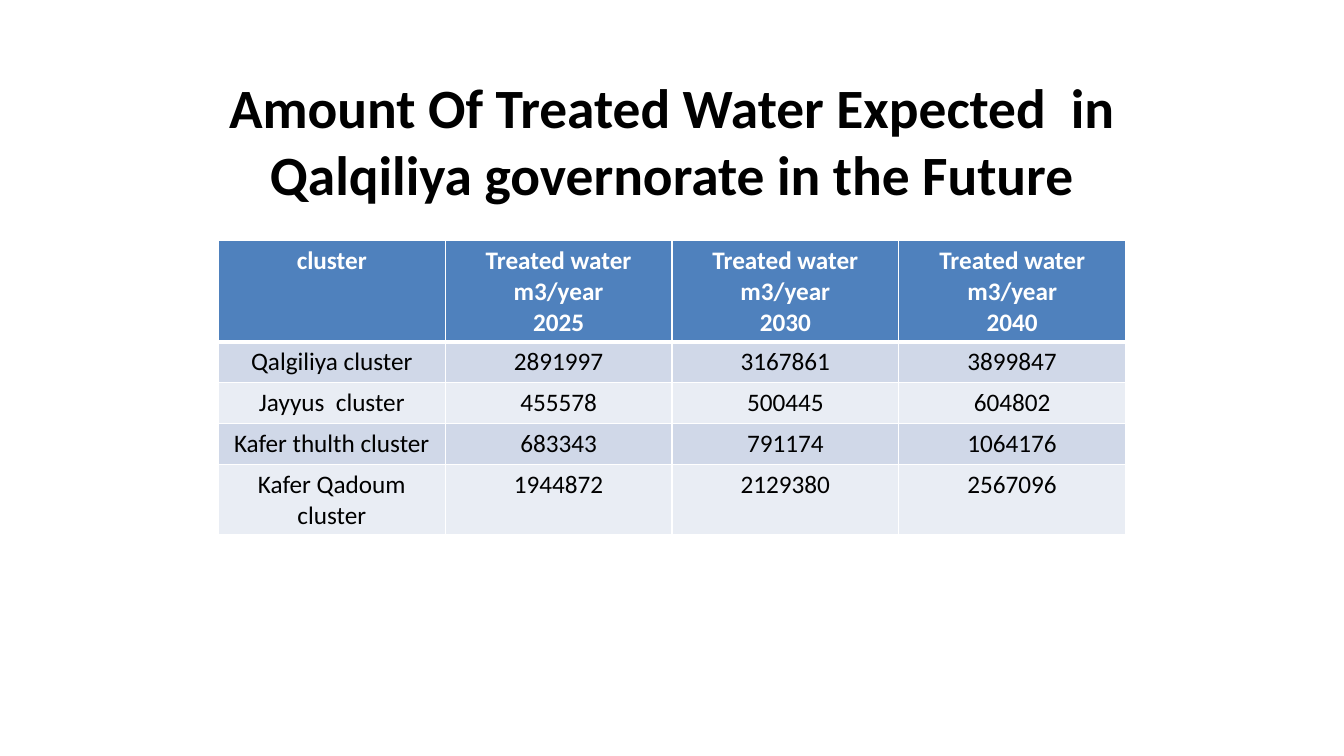
from lxml import etree
from pptx import Presentation
from pptx.dml.color import RGBColor
from pptx.enum.text import MSO_ANCHOR, PP_ALIGN
from pptx.oxml.ns import qn
from pptx.util import Pt

CENTER = PP_ALIGN.CENTER
MIDDLE = MSO_ANCHOR.MIDDLE
BLACK = RGBColor(0x00, 0x00, 0x00)
WHITE = RGBColor(0xFF, 0xFF, 0xFF)
HEADER_BLUE = RGBColor(0x4F, 0x81, 0xBD)
BANDS = (RGBColor(0xD0, 0xD8, 0xE8), RGBColor(0xE9, 0xED, 0xF4))
FONT = "Calibri"

TITLE = "Amount Of Treated Water Expected  in Qalqiliya governorate in the Future"
YEARS = (2025, 2030, 2040)
CLUSTERS = (
    ("Qalgiliya cluster", 2891997, 3167861, 3899847),
    ("Jayyus  cluster", 455578, 500445, 604802),
    ("Kafer thulth cluster", 683343, 791174, 1064176),
    ("Kafer Qadoum cluster", 1944872, 2129380, 2567096),
)


def add_lines(text_frame, lines, size, color, bold):
    for index, line in enumerate(lines):
        paragraph = text_frame.paragraphs[0] if index == 0 else text_frame.add_paragraph()
        paragraph.alignment = CENTER
        run = paragraph.add_run()
        run.text = line
        run.font.name = FONT
        run.font.size = Pt(size)
        run.font.bold = bold
        run.font.color.rgb = color


def add_title(slide, left, top, width, height):
    shape = slide.shapes.add_textbox(Pt(left), Pt(top), Pt(width), Pt(height))
    text_frame = shape.text_frame
    text_frame.word_wrap = True
    text_frame.vertical_anchor = MIDDLE
    text_frame.margin_bottom = Pt(46)
    add_lines(text_frame, [TITLE], 39.6, BLACK, True)


def set_borders(cell, bottom_width):
    properties = cell._tc.get_or_add_tcPr()
    widths = (("a:lnL", 1), ("a:lnR", 1), ("a:lnT", 1), ("a:lnB", bottom_width))
    for side, width in widths:
        line = etree.SubElement(properties, qn(side), w=str(Pt(width)))
        fill = etree.SubElement(line, qn("a:solidFill"))
        etree.SubElement(fill, qn("a:srgbClr"), val=str(WHITE))


def fill_cell(cell, lines, fill, color, bold, bottom_width):
    add_lines(cell.text_frame, lines, 18, color, bold)
    set_borders(cell, bottom_width)
    cell.fill.solid()
    cell.fill.fore_color.rgb = fill


def add_water_table(slide, left, top, width, height):
    row_count, column_count = len(CLUSTERS) + 1, len(YEARS) + 1
    table = slide.shapes.add_table(
        row_count, column_count, Pt(left), Pt(top), Pt(width), Pt(height)
    ).table
    for column in table.columns:
        column.width = Pt(width / column_count)
    for row in table.rows:
        row.height = Pt(29.2)

    headings = [["cluster"]] + [["Treated water m3/year", str(year)] for year in YEARS]
    for column, lines in enumerate(headings):
        fill_cell(table.cell(0, column), lines, HEADER_BLUE, WHITE, True, 3)
    for row, values in enumerate(CLUSTERS, start=1):
        band = BANDS[(row - 1) % 2]
        for column, value in enumerate(values):
            fill_cell(table.cell(row, column), [str(value)], band, BLACK, False, 1)


def main():
    presentation = Presentation()
    presentation.slide_width = Pt(960)
    presentation.slide_height = Pt(540)
    slide = presentation.slides.add_slide(presentation.slide_layouts[6])
    add_title(slide, 156, 70, 648, 102)
    add_water_table(slide, 156, 172, 648, 210)
    presentation.save("out.pptx")


if __name__ == "__main__":
    main()
